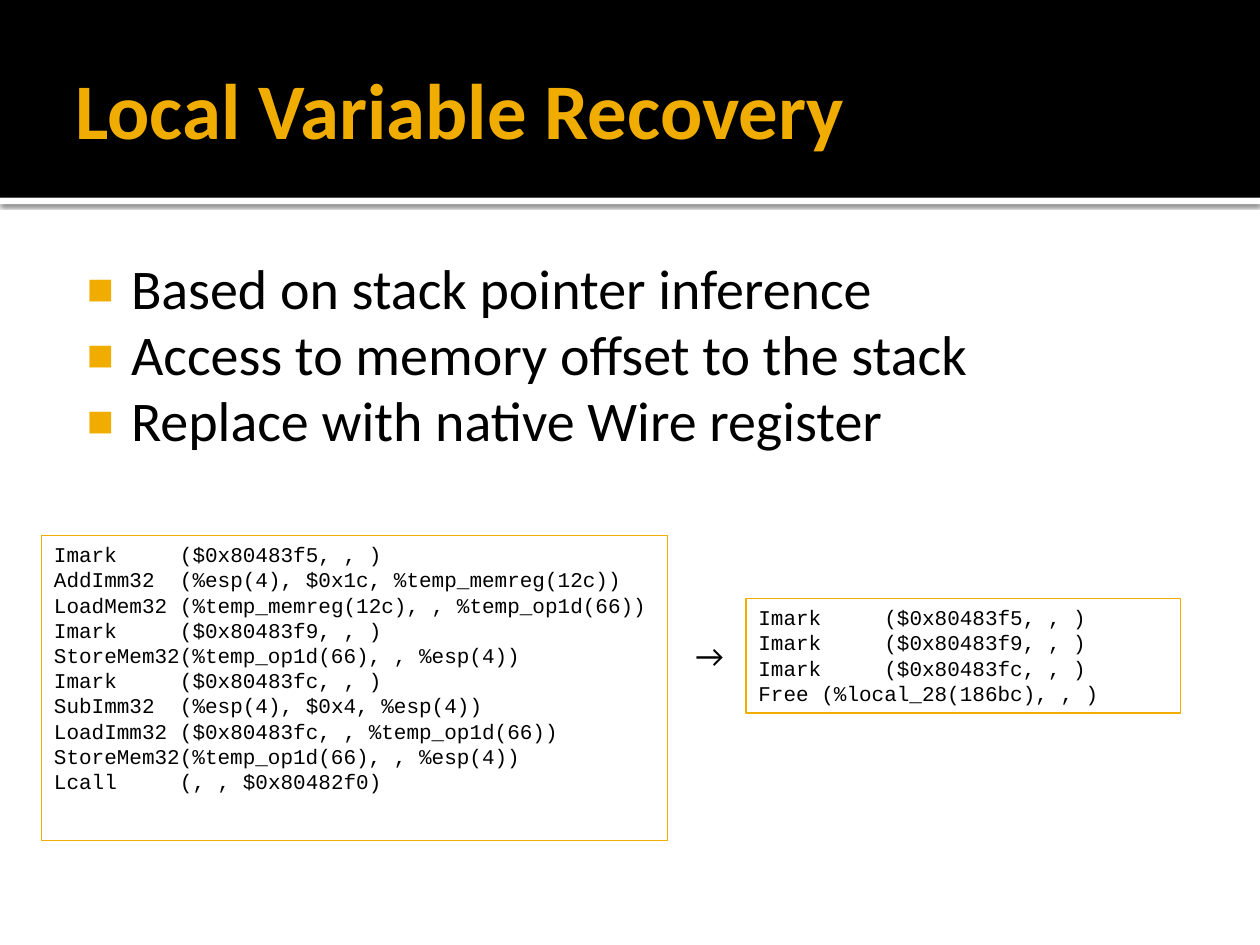
from lxml import etree
from pptx import Presentation
from pptx import util as u
from pptx.dml.color import RGBColor
from pptx.enum import shapes, text
from pptx.oxml import parse_xml
from pptx.oxml.ns import nsdecls, qn

AMBER = RGBColor(0xF0, 0xAD, 0x00)
BLACK = RGBColor(0, 0, 0)
WHITE = RGBColor(0xFF, 0xFF, 0xFF)
BODY_FONT = "Calibri"
CODE_FONT = "Courier New"

BULLETS = [
    "Based on stack pointer inference",
    "Access to memory offset to the stack",
    "Replace with native Wire register",
]
CODE_BEFORE = [
    "Imark\t($0x80483f5, , )",
    "AddImm32\t(%esp(4), $0x1c, %temp_memreg(12c))",
    "LoadMem32\t(%temp_memreg(12c), , %temp_op1d(66))",
    "Imark\t($0x80483f9, , )",
    "StoreMem32(%temp_op1d(66), , %esp(4))",
    "Imark\t($0x80483fc, , )",
    "SubImm32\t(%esp(4), $0x4, %esp(4))",
    "LoadImm32\t($0x80483fc, , %temp_op1d(66))",
    "StoreMem32(%temp_op1d(66), , %esp(4))",
    "Lcall\t(, , $0x80482f0)",
]
CODE_AFTER = [
    "Imark\t($0x80483f5, , )",
    "Imark\t($0x80483f9, , )",
    "Imark\t($0x80483fc, , )",
    "Free\t(%local_28(186bc), , )",
]


def place(shape, left, top, width, height):
    shape.left, shape.top = u.Inches(left), u.Inches(top)
    shape.width, shape.height = u.Inches(width), u.Inches(height)


def write(shape, lines, font, size, color, bold=False, wrap=True,
          anchor=text.MSO_ANCHOR.TOP, insets=(0.1, 0.05, 0.1, 0.05)):
    """Fill a shape with left-aligned lines in one format."""
    frame = shape.text_frame
    frame.text = "\n".join(lines)
    frame.word_wrap = wrap
    frame.auto_size = text.MSO_AUTO_SIZE.NONE
    frame.vertical_anchor = anchor
    (frame.margin_left, frame.margin_top,
     frame.margin_right, frame.margin_bottom) = map(u.Inches, insets)
    for paragraph in frame.paragraphs:
        paragraph.alignment = text.PP_ALIGN.LEFT
        for run in paragraph.runs:
            run.font.name = font
            run.font.size = u.Pt(size)
            run.font.bold = bold
            run.font.color.rgb = color


def add_band(slide, top, height, color):
    """Add a full-width band behind everything else on the slide."""
    band = slide.shapes.add_shape(
        shapes.MSO_SHAPE.RECTANGLE, 0, u.Inches(top), u.Inches(10), u.Inches(height))
    band.shadow.inherit = False
    band.fill.solid()
    band.fill.fore_color.rgb = color
    band.line.fill.background()
    band.element.getparent().insert(2, band.element)
    return band


def add_soft_shadow(shape):
    effects = shape.element.spPr.find(qn("a:effectLst"))
    effects.append(parse_xml(
        f'<a:outerShdw {nsdecls("a")} blurRad="{u.Pt(2.5)}" dist="{u.Pt(0.8)}" '
        f'dir="5400000" algn="tl" rotWithShape="0"><a:srgbClr val="{BLACK}">'
        '<a:alpha val="60000"/></a:srgbClr></a:outerShdw>'))


def add_square_bullet(paragraph):
    paragraph.space_before = u.Pt(0)
    paragraph.line_spacing = 0.98
    properties = paragraph._p.get_or_add_pPr()
    properties.set("marL", str(u.Inches(0.48)))
    properties.set("indent", str(u.Inches(-0.35)))
    color = etree.SubElement(properties, qn("a:buClr"))
    etree.SubElement(color, qn("a:srgbClr"), val=str(AMBER))
    etree.SubElement(properties, qn("a:buSzPct"), val="80000")
    etree.SubElement(properties, qn("a:buFont"), typeface="Arial")
    etree.SubElement(properties, qn("a:buChar"), char="■")


def add_code_box(slide, lines, left, top, width, height, wrap=True):
    box = slide.shapes.add_shape(shapes.MSO_SHAPE.RECTANGLE, 0, 0, 0, 0)
    place(box, left, top, width, height)
    box.shadow.inherit = False
    box.fill.background()
    box.line.color.rgb = AMBER
    box.line.width = u.Pt(0.75)
    write(box, lines, CODE_FONT, 12, BLACK, wrap=wrap)


def main():
    presentation = Presentation()
    presentation.slide_width = u.Inches(10)
    presentation.slide_height = u.Inches(7.5)
    slide = presentation.slides.add_slide(presentation.slide_layouts[1])

    # Header bands: each goes to the very back, so the black one ends lowest
    # in the tree order only if the white one is added last.
    add_band(slide, 0, 1.57, BLACK)
    add_soft_shadow(add_band(slide, 1.57, 0.05, WHITE))

    # Title and bullet list
    title, body = slide.placeholders
    place(title, 0.5, 0.17, 9, 1.37)
    write(title, ["Local Variable Recovery"], BODY_FONT, 45, AMBER, bold=True,
          anchor=text.MSO_ANCHOR.MIDDLE, insets=(0.1, 0.05, 0.05, 0.05))
    place(body, 0.5, 1.94, 9, 5.06)
    write(body, BULLETS, BODY_FONT, 32, BLACK, insets=(0.06, 0.1, 0.1, 0.05))
    for paragraph in body.text_frame.paragraphs:
        add_square_bullet(paragraph)

    # Code before and after recovery, with an arrow between
    add_code_box(slide, CODE_BEFORE, 0.33, 4.25, 4.97, 2.42)
    add_code_box(slide, CODE_AFTER, 5.92, 4.75, 3.45, 0.91, wrap=False)
    arrow = slide.shapes.add_textbox(
        u.Inches(5.42), u.Inches(5), u.Inches(0.45), u.Inches(0.4))
    write(arrow, ["→"], BODY_FONT, 18, BLACK, wrap=False)

    presentation.save("out.pptx")


if __name__ == "__main__":
    main()
